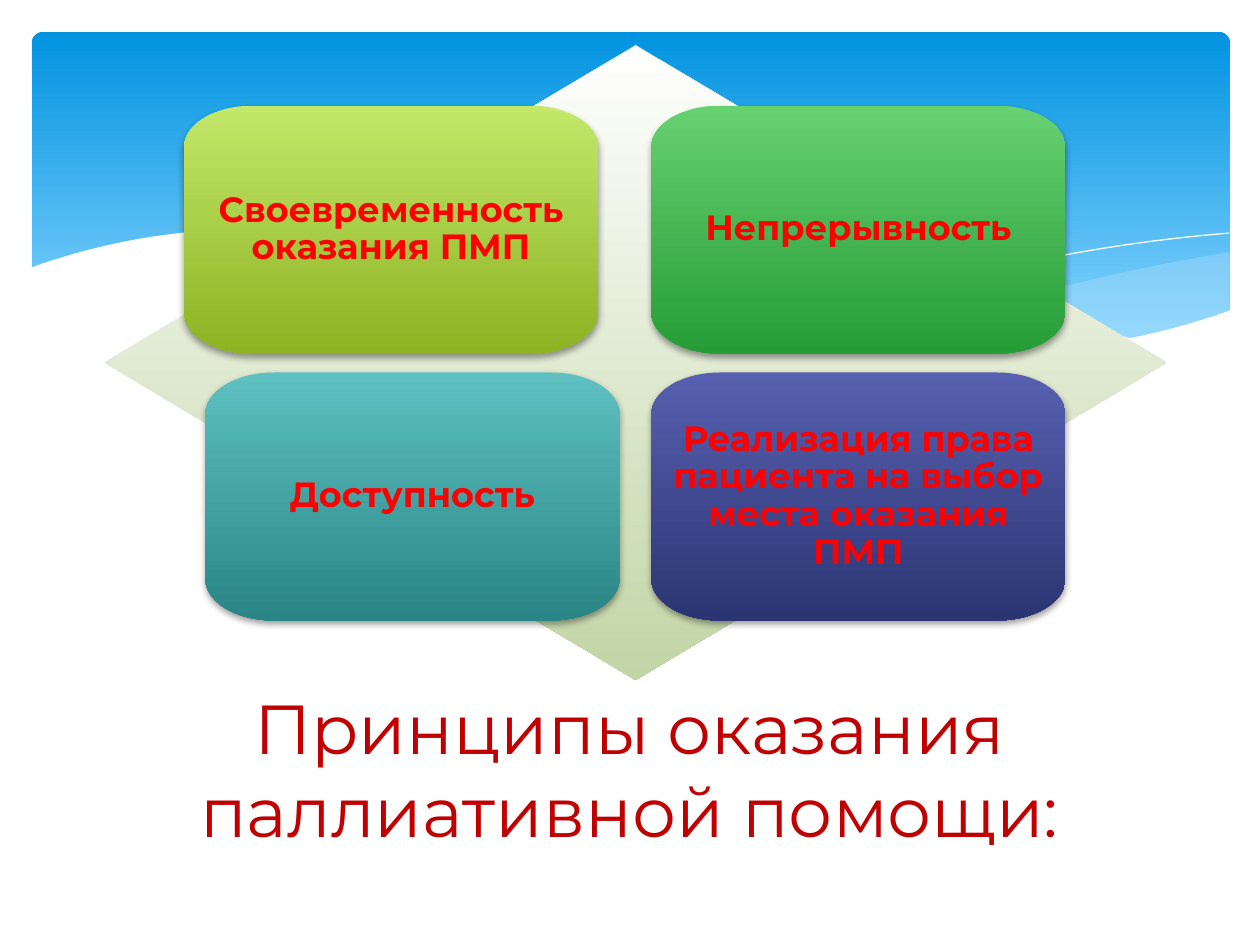
"""Build a slide with four principles of palliative care on a wave background."""
from math import cos, pi, sin

from lxml.etree import SubElement
from pptx import Presentation
from pptx.dml.color import RGBColor
from pptx.enum.shapes import MSO_SHAPE
from pptx.enum.text import MSO_ANCHOR, PP_ALIGN
from pptx.oxml.ns import qn
from pptx.util import Cm, Pt

WHITE = RGBColor(0xFF, 0xFF, 0xFF)
RED = RGBColor(0xFF, 0x00, 0x00)
DARK_RED = RGBColor(0xC0, 0x00, 0x00)
PALE_BLUE = RGBColor(0xC6, 0xE7, 0xFC)
SKY = (RGBColor(0x02, 0x93, 0xE0), RGBColor(0x83, 0xD3, 0xFE))
SAGE = (WHITE, RGBColor(0xC2, 0xD5, 0xA6))
LIME = (RGBColor(0xC3, 0xE8, 0x6A), RGBColor(0x8D, 0xB2, 0x22))
GREEN = (RGBColor(0x66, 0xD1, 0x71), RGBColor(0x26, 0x9C, 0x36))
TEAL = (RGBColor(0x5E, 0xC0, 0xC0), RGBColor(0x2A, 0x86, 0x86))
INDIGO = (RGBColor(0x57, 0x60, 0xAF), RGBColor(0x2C, 0x35, 0x73))
FONT = "Montserrat"
STEPS = 16


def curve(x_start, x_end, heights):
    """Return points of a smooth curve through evenly spaced heights."""
    before = 3 * heights[0] - 3 * heights[1] + heights[2]
    after = 3 * heights[-1] - 3 * heights[-2] + heights[-3]
    ys = [before, *heights, after]
    spans = len(heights) - 1
    points = []
    for i in range(spans):
        a, b, c, d = ys[i:i + 4]
        for k in range(STEPS):
            t = k / STEPS
            y = b + t * (c - a + t * (2 * a - 5 * b + 4 * c - d + t * (3 * b - 3 * c + d - a))) / 2
            points.append((x_start + (x_end - x_start) * (i + t) / spans, y))
    return points + [(x_end, heights[-1])]


def outline(s, points, close=True):
    """Draw a freeform without line or shadow through points in centimetres."""
    emu = [(Cm(x), Cm(y)) for x, y in points]
    fb = s.shapes.build_freeform(*emu[0])
    fb.add_line_segments(emu[1:], close=close)
    sp = fb.convert_to_shape()
    sp.shadow.inherit = False
    sp.line.fill.background()
    return sp


prs = Presentation()
prs.slide_width, prs.slide_height = Cm(25.4), Cm(19.05)
s = prs.slides.add_slide(prs.slide_layouts[6])

banner = s.shapes.add_shape(MSO_SHAPE.ROUNDED_RECTANGLE, Cm(0.64), Cm(0.64), Cm(24.16), Cm(6.86))
banner.adjustments[0] = 0.034
gradients = [(banner, SKY, 0.9)]

right_wave = (curve(16.79, 24.79, [6.73, 6.37, 5.93, 5.46, 5.08])
              + curve(24.79, 16.79, [6.27, 6.86, 7.05, 6.95, 6.73]))
middle_wave = (curve(22.68, 7.26, [6.93, 6.43, 5.77, 5.09, 4.73, 4.85])
               + curve(7.26, 22.68, [4.85, 5.38, 6.09, 6.71, 7.04, 6.93]))
front_wave = (curve(0.58, 24.82, [5.41, 4.7, 4.75, 5.21, 5.91, 6.53, 6.95, 6.97, 6.25])
              + [(24.82, 8.36), (0.58, 8.36)])
left_crest = curve(7.85, 23.04, [4.95, 4.78, 5.18, 5.91, 6.91])
right_crest = curve(15.57, 24.77, [6.53, 5.92, 5.4, 4.97, 4.7])

for points, opacity in [(right_wave, 29), (middle_wave, 40)]:
    sp = outline(s, points)
    sp.fill.solid()
    sp.fill.fore_color.rgb = PALE_BLUE
    clr = sp._element.spPr.find(qn("a:solidFill"))[0]
    SubElement(clr, qn("a:alpha"), val=str(opacity * 1000))

for points in (left_crest, right_crest):
    sp = outline(s, points, close=False)
    sp.fill.background()
    sp.line.color.rgb = WHITE
    sp.line.width = Pt(0)

sp = outline(s, front_wave)
sp.fill.solid()
sp.fill.fore_color.rgb = WHITE

title = s.shapes.add_textbox(Cm(0.89), Cm(13.82), Cm(23.6), Cm(4.39))
tf = title.text_frame
tf.word_wrap = True
tf.margin_top = tf.margin_bottom = 0
p = tf.paragraphs[0]
p.alignment = PP_ALIGN.CENTER
r = p.add_run()
r.text = "Принципы оказания паллиативной помощи:"
r.font.name, r.font.size = FONT, Pt(39.6)
r.font.color.rgb = DARK_RED

diamond = s.shapes.add_shape(MSO_SHAPE.DIAMOND, Cm(2.11), Cm(0.91), Cm(21.41), Cm(12.8))
gradients.append((diamond, SAGE, 1))

CARD_W, CARD_H = 8.35, 5
RADIUS_X, RADIUS_Y = 1.38, 0.84
TOP_ROW, BOTTOM_ROW = 2.13, 7.51
RIGHT_COLUMN = 13.13
cards = [
    (3.71, TOP_ROW, LIME, "Своевременность оказания ПМП"),
    (RIGHT_COLUMN, TOP_ROW, GREEN, "Непрерывность"),
    (4.14, BOTTOM_ROW, TEAL, "Доступность"),
    (RIGHT_COLUMN, BOTTOM_ROW, INDIGO, "Реализация права пациента на выбор места оказания ПМП")]
for left, top, colors, text in cards:
    near_x, far_x = left + RADIUS_X, left + CARD_W - RADIUS_X
    near_y, far_y = top + RADIUS_Y, top + CARD_H - RADIUS_Y
    centres = [(far_x, far_y), (near_x, far_y), (near_x, near_y), (far_x, near_y)]
    points = []
    for quarter, (cx, cy) in enumerate(centres):
        for k in range(STEPS + 1):
            angle = (quarter + k / STEPS) * pi / 2
            points.append((cx + RADIUS_X * cos(angle), cy + RADIUS_Y * sin(angle)))
    sp = outline(s, points)
    gradients.append((sp, colors, 1))
    effects = sp._element.spPr.find(qn("a:effectLst"))
    shadow = SubElement(effects, qn("a:outerShdw"), blurRad=str(Pt(4)), dist=str(Pt(2)),
                        dir="5400000", rotWithShape="0")
    clr = SubElement(shadow, qn("a:srgbClr"), val="000000")
    SubElement(clr, qn("a:alpha"), val="38000")
    tf = sp.text_frame
    tf.word_wrap = True
    tf.vertical_anchor = MSO_ANCHOR.MIDDLE
    tf.margin_left = tf.margin_right = tf.margin_top = tf.margin_bottom = Cm(0.3)
    p = tf.paragraphs[0]
    p.alignment = PP_ALIGN.CENTER
    p.line_spacing = 0.9
    r = p.add_run()
    r.text = text
    r.font.name, r.font.size, r.font.bold = FONT, Pt(20), True
    r.font.color.rgb = RED

for sp, colors, end in gradients:
    sp.fill.gradient()
    sp.fill.gradient_angle = 270
    for stop, color, position in zip(sp.fill.gradient_stops, colors, (0, end)):
        stop.color.rgb = color
        stop.position = position
    sp.line.fill.background()
    if sp in (banner, diamond):
        sp.shadow.inherit = False

prs.save("out.pptx")
